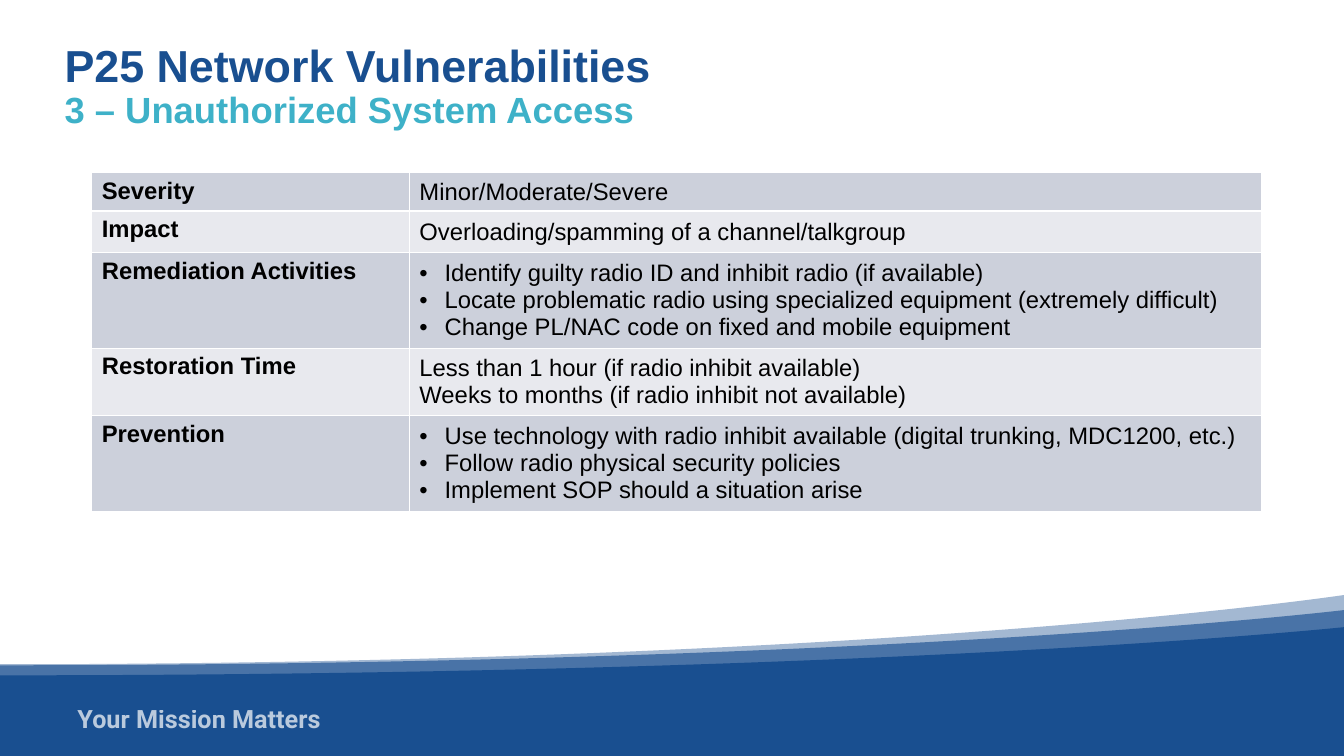
from lxml import etree
from pptx import Presentation
from pptx.dml.color import RGBColor
from pptx.enum.text import MSO_ANCHOR, MSO_AUTO_SIZE, PP_ALIGN
from pptx.oxml.ns import qn
from pptx.util import Inches, Pt

TOP, MID = MSO_ANCHOR.TOP, MSO_ANCHOR.MIDDLE
LEFT, FIXED = PP_ALIGN.LEFT, MSO_AUTO_SIZE.NONE
NAVY, TEAL, WHITE, BLACK = "194F90", "3EB1C8", "FFFFFF", "000000"
BANDS = ["CCD0DB", "E8E9EE"]


def paint(fill, color, alpha=100):
    fill.solid()
    fill.fore_color.rgb = RGBColor.from_string(color)
    if alpha < 100:
        tint = fill._xPr.find(qn("a:solidFill"))[0]
        etree.SubElement(tint, qn("a:alpha"), val=str(alpha * 1000))


def style(run, color, alpha=100, **form):
    for key, val in form.items():
        setattr(run.font, key, val)
    paint(run.font.fill, color, alpha)


deck = Presentation()
deck.slide_width, deck.slide_height = Inches(13.33), Inches(7.5)
slide = deck.slides.add_slide(deck.slide_layouts[5])
shapes = slide.shapes

# Footer waves: right height, bend x, left height, bottom, opacity
waves = [(5.9, 8.8, 6.59, 7.52, 40),
         (6.05, 8.81, 6.6, 7.54, 65),
         (6.22, 8.82, 6.7, 7.55, 100)]
for high, bend, low, base, alpha in waves:
    spots = [(13.35, high), (-0.02, low), (-0.02, base), (13.35, base)]
    spots = [(Inches(x), Inches(y)) for x, y in spots]
    pen = shapes.build_freeform(*spots[0], scale=1.0)
    pen.add_line_segments(spots[1:], close=True)
    wave = pen.convert_to_shape()
    wave.shadow.inherit = False
    wave.line.fill.background()
    paint(wave.fill, NAVY, alpha)
    # Bend the top edge
    edge = next(wave._element.iter(qn("a:lnTo")))
    edge.tag = qn("a:cubicBezTo")
    handles = [spots[0], (Inches(bend), Inches(low))]
    for place, (x, y) in enumerate(handles):
        point = etree.Element(qn("a:pt"), x=str(x - wave.left), y=str(y - wave.top))
        edge.insert(place, point)

# Footer motto, with two tightened letters
motto = shapes.add_textbox(Inches(0.67), Inches(6.93), Inches(3.89), Inches(0.41))
motto.text_frame.word_wrap = True
para = motto.text_frame.paragraphs[0]
for text, gap in [("You", 0), ("r", -150), (" Missio", 0), ("n", -150), (" Matters", 0)]:
    run = para.add_run()
    run.text = text
    style(run, WHITE, 70, name="Roboto", size=Pt(18), bold=True)
    run.font._element.set("spc", str(gap))

# Title and subtitle
title = shapes.title
title.left, title.top = Inches(0.54), Inches(0.38)
title.width, title.height = Inches(12.54), Inches(0.52)
frame = title.text_frame
frame.text = "P25 Network Vulnerabilities\v3 – Unauthorized System Access"
for key, val in dict(vertical_anchor=TOP, auto_size=FIXED, word_wrap=True).items():
    setattr(frame, key, val)
para = frame.paragraphs[0]
para.alignment, para.line_spacing = LEFT, 0.9
etree.SubElement(para._p.find(qn("a:br")), qn("a:rPr"), sz="3200")
for run, size, color in zip(para.runs, (32, 26), (NAVY, TEAL)):
    style(run, color, name="Arial", size=Pt(size), bold=True)

# Table: label, bulleted or not, lines; rows grow with their text
rows = [
    ("Severity", False, ["Minor/Moderate/Severe"]),
    ("Impact", False, ["Overloading/spamming of a channel/talkgroup"]),
    ("Remediation Activities", True, [
        "Identify guilty radio ID and inhibit radio (if available)",
        "Locate problematic radio using specialized equipment (extremely difficult)",
        "Change PL/NAC code on fixed and mobile equipment"]),
    ("Restoration Time", False, [
        "Less than 1 hour (if radio inhibit available)",
        "Weeks to months (if radio inhibit not available)"]),
    ("Prevention", True, [
        "Use technology with radio inhibit available (digital trunking, MDC1200, etc.)",
        "Follow radio physical security policies",
        "Implement SOP should a situation arise"]),
]
holder = shapes.add_table(len(rows), 2, Inches(0.91), Inches(1.71),
                          Inches(11.6), Inches(3.36))
table = holder.table
table.first_row = table.horz_banding = False
for col, wide in zip(table.columns, (3.15, 8.45)):
    col.width = Inches(wide)

for r, (label, listed, lines) in enumerate(rows):
    table.rows[r].height = Inches(0.41 if r else 0)
    for c, texts in enumerate(([label], lines)):
        cell = table.cell(r, c)
        cell.vertical_anchor = MID if c else TOP
        # White borders
        props = cell._tc.get_or_add_tcPr()
        for side in ("lnL", "lnR", "lnT", "lnB"):
            edge = etree.SubElement(props, qn("a:" + side), w=str(Pt(1)))
            solid = etree.SubElement(edge, qn("a:solidFill"))
            etree.SubElement(solid, qn("a:srgbClr"), val=WHITE)
        paint(cell.fill, BANDS[r % 2])
        cell.text_frame.text = "\n".join(texts)
        for para in cell.text_frame.paragraphs:
            if c and listed:
                fmt = para._p.get_or_add_pPr()
                fmt.set("marL", str(Inches(0.25)))
                fmt.set("indent", str(Inches(-0.25)))
                etree.SubElement(fmt, qn("a:buFont"), typeface="Arial")
                etree.SubElement(fmt, qn("a:buChar"), char="•")
            style(para.runs[0], BLACK, name="Arial", size=Pt(17), bold=c == 0)
holder.height = Inches(3.36)

deck.save("out.pptx")
